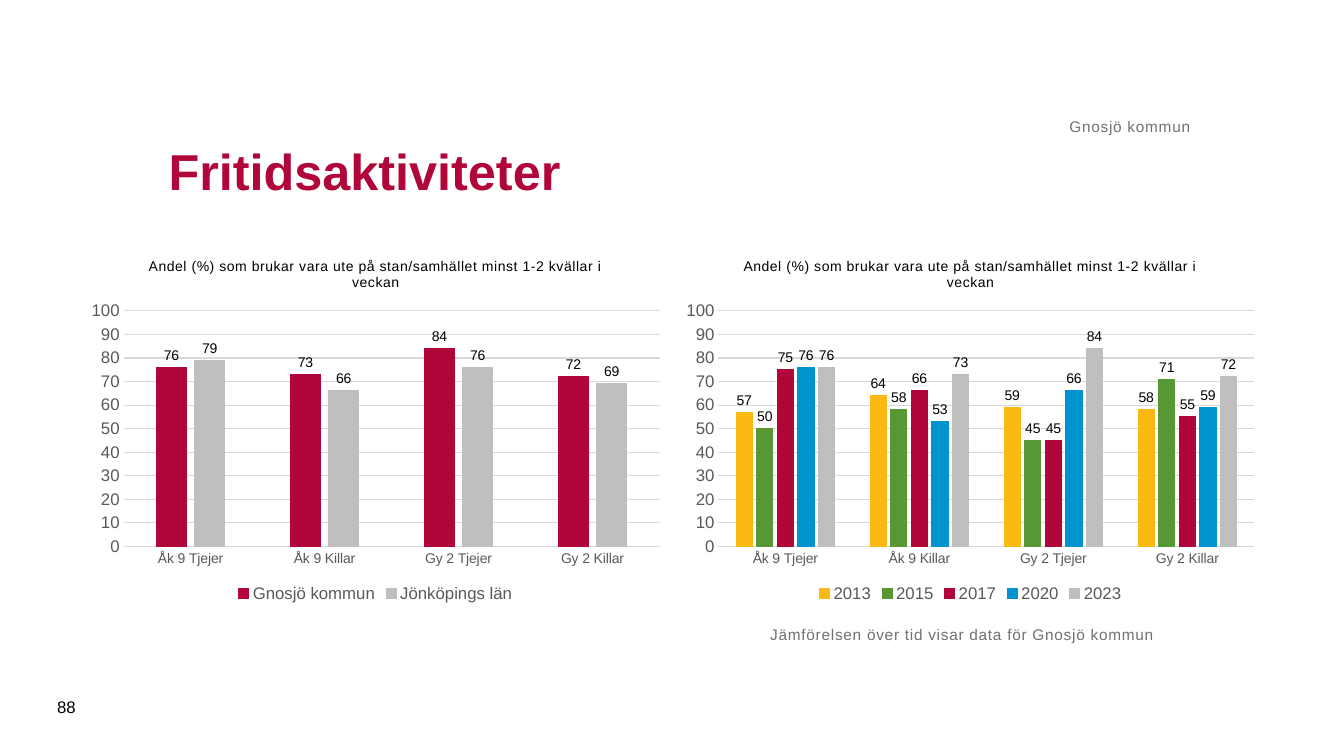
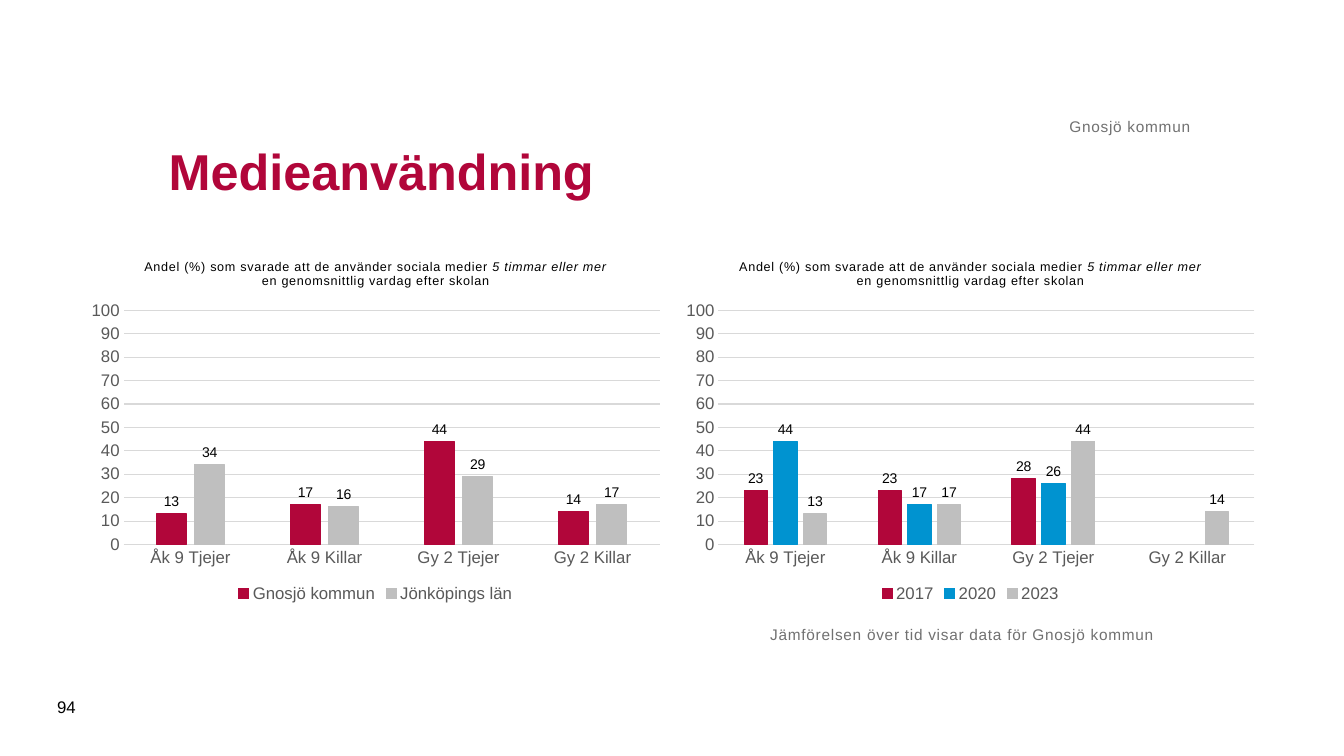
from pptx import Presentation
from pptx.chart.data import CategoryChartData
from pptx.dml.color import RGBColor
from pptx.enum import chart as chart_enum, text
from pptx.util import Cm, Pt

FONT = "Arial"
CRIMSON = RGBColor(0xB1, 0x06, 0x3A)
SILVER = RGBColor(0xBF, 0xBF, 0xBF)
YELLOW = RGBColor(0xFD, 0xB9, 0x13)
GREEN = RGBColor(0x57, 0x98, 0x35)
BLUE = RGBColor(0x00, 0x93, 0xD0)
BLACK = RGBColor(0x00, 0x00, 0x00)
AXIS_GRAY = RGBColor(0x59, 0x59, 0x59)
NOTE_GRAY = RGBColor(0x71, 0x71, 0x71)
GRID_GRAY = RGBColor(0xD9, 0xD9, 0xD9)

MUNICIPALITY = "Gnosjö kommun"
COUNTY = "Jönköpings län"
TREND_NOTE = "Jämförelsen över tid visar data för Gnosjö kommun"
GROUPS = ["Åk 9 Tjejer", "Åk 9 Killar", "Gy 2 Tjejer", "Gy 2 Killar"]
SERIES_COLORS = {
    MUNICIPALITY: CRIMSON,
    COUNTY: SILVER,
    "2013": YELLOW,
    "2015": GREEN,
    "2017": CRIMSON,
    "2020": BLUE,
    "2023": SILVER,
}
NUMBER_FORMAT = "#,##0;#,##0"
LETTER_SPACING = "50"

MARGIN_LEFT = Cm(4)
CONTENT_WIDTH = Cm(26)
CHART_LEFT, CHART_TOP = Cm(2.01), Cm(6.1)
CHART_WIDTH, CHART_HEIGHT = Cm(14.91), Cm(9.19)
CHART_STEP = Cm(14.99)

SLIDES = [
    {
        "title": "Fritidsaktiviteter",
        "number": "88",
        "question": [
            ("Andel (%) som brukar vara ute på stan/samhället "
             "minst 1-2 kvällar i veckan", False),
        ],
        "question_size": 10,
        "category_size": 10,
        "charts": [
            {MUNICIPALITY: (76, 73, 84, 72), COUNTY: (79, 66, 76, 69)},
            {
                "2013": (57, 64, 59, 58),
                "2015": (50, 58, 45, 71),
                "2017": (75, 66, 45, 55),
                "2020": (76, 53, 66, 59),
                "2023": (76, 73, 84, 72),
            },
        ],
    },
    {
        "title": "Medieanvändning",
        "number": "94",
        "question": [
            ("Andel (%) som svarade att de använder sociala medier ", False),
            ("5 timmar eller mer", True),
            (" en genomsnittlig vardag efter skolan", False),
        ],
        "question_size": 9,
        "category_size": 12,
        "charts": [
            {MUNICIPALITY: (13, 17, 44, 14), COUNTY: (34, 16, 29, 17)},
            {
                "2017": (23, 23, 28, None),
                "2020": (44, 17, 26, None),
                "2023": (13, 17, 44, 14),
            },
        ],
    },
]


def style_font(font, size, color, bold=False, italic=False):
    font.name = FONT
    font.size = Pt(size)
    font.bold = bold
    font.italic = italic
    font.color.rgb = color


def add_run(paragraph, content, size, color, bold=False, italic=False, spaced=False):
    run = paragraph.add_run()
    run.text = content
    style_font(run.font, size, color, bold, italic)
    if spaced:
        run._r.get_or_add_rPr().set("spc", LETTER_SPACING)


def add_text(slide, box, content, size, color, anchor, bold=False):
    frame = slide.shapes.add_textbox(*box).text_frame
    frame.word_wrap = True
    frame.vertical_anchor = anchor
    add_run(frame.paragraphs[0], content, size, color, bold)


def add_caption(slide, box, content, anchor, alignment):
    frame = slide.shapes.add_textbox(*box).text_frame
    frame.word_wrap = True
    frame.vertical_anchor = anchor
    frame.margin_left = frame.margin_right = 0
    frame.margin_top = frame.margin_bottom = 0
    paragraph = frame.paragraphs[0]
    paragraph.alignment = alignment
    add_run(paragraph, content, 11, NOTE_GRAY, spaced=True)


def add_page_frame(slide, title, number):
    add_text(slide, (MARGIN_LEFT, Cm(2.49), CONTENT_WIDTH, Cm(3.6)),
             title, 36, CRIMSON, text.MSO_ANCHOR.MIDDLE, bold=True)
    add_caption(slide, (MARGIN_LEFT, Cm(1.57), CONTENT_WIDTH, Cm(1.85)),
                MUNICIPALITY, text.MSO_ANCHOR.BOTTOM, text.PP_ALIGN.RIGHT)
    add_text(slide, (Cm(1.19), Cm(17.3), Cm(1.45), Cm(1.02)),
             number, 12, BLACK, text.MSO_ANCHOR.MIDDLE)
    add_caption(slide, (Cm(19.41), Cm(15.75), Cm(13.49), Cm(2.39)),
                TREND_NOTE, text.MSO_ANCHOR.TOP, text.PP_ALIGN.LEFT)


def style_line(line, color):
    line.color.rgb = color
    line.width = Pt(0.75)


def style_axes(chart, category_size):
    category_axis, value_axis = chart.category_axis, chart.value_axis
    for axis, size in ((category_axis, category_size), (value_axis, 12)):
        axis.major_tick_mark = chart_enum.XL_TICK_MARK.NONE
        axis.minor_tick_mark = chart_enum.XL_TICK_MARK.NONE
        style_font(axis.tick_labels.font, size, AXIS_GRAY)
    style_line(category_axis.format.line, GRID_GRAY)
    value_axis.format.line.fill.background()
    value_axis.minimum_scale = 0
    value_axis.maximum_scale = 100
    value_axis.major_unit = 10
    value_axis.has_major_gridlines = True
    style_line(value_axis.major_gridlines.format.line, GRID_GRAY)
    value_axis.tick_labels.number_format = NUMBER_FORMAT
    value_axis.tick_labels.number_format_is_linked = False


def style_series(series):
    color = SERIES_COLORS[series.name]
    series.invert_if_negative = False
    series.format.fill.solid()
    series.format.fill.fore_color.rgb = color
    style_line(series.format.line, color)
    labels = series.data_labels
    labels.show_value = True
    labels.position = chart_enum.XL_LABEL_POSITION.OUTSIDE_END
    labels.number_format = NUMBER_FORMAT
    labels.number_format_is_linked = False
    style_font(labels.font, 10, BLACK)


def add_column_chart(slide, left, series_values, content):
    data = CategoryChartData(number_format=NUMBER_FORMAT)
    data.categories = GROUPS
    for name, values in series_values.items():
        data.add_series(name, values)
    chart = slide.shapes.add_chart(
        chart_enum.XL_CHART_TYPE.COLUMN_CLUSTERED,
        left, CHART_TOP, CHART_WIDTH, CHART_HEIGHT, data).chart
    style_font(chart.font, 10, BLACK)

    chart.has_title = True
    chart.chart_title.include_in_layout = False
    paragraph = chart.chart_title.text_frame.paragraphs[0]
    for wording, italic in content["question"]:
        add_run(paragraph, wording, content["question_size"], BLACK,
                italic=italic, spaced=True)

    chart.has_legend = True
    chart.legend.position = chart_enum.XL_LEGEND_POSITION.BOTTOM
    chart.legend.include_in_layout = False
    style_font(chart.legend.font, 12, AXIS_GRAY)

    style_axes(chart, content["category_size"])
    plot = chart.plots[0]
    plot.vary_by_categories = False
    plot.gap_width = 219
    plot.overlap = -27
    for series in plot.series:
        style_series(series)


def main():
    presentation = Presentation()
    presentation.slide_width = Cm(33.87)
    presentation.slide_height = Cm(19.05)
    for content in SLIDES:
        slide = presentation.slides.add_slide(presentation.slide_layouts[6])
        for index, series_values in enumerate(content["charts"]):
            add_column_chart(slide, CHART_LEFT + index * CHART_STEP,
                             series_values, content)
        add_page_frame(slide, content["title"], content["number"])
    presentation.save("out.pptx")


if __name__ == "__main__":
    main()
